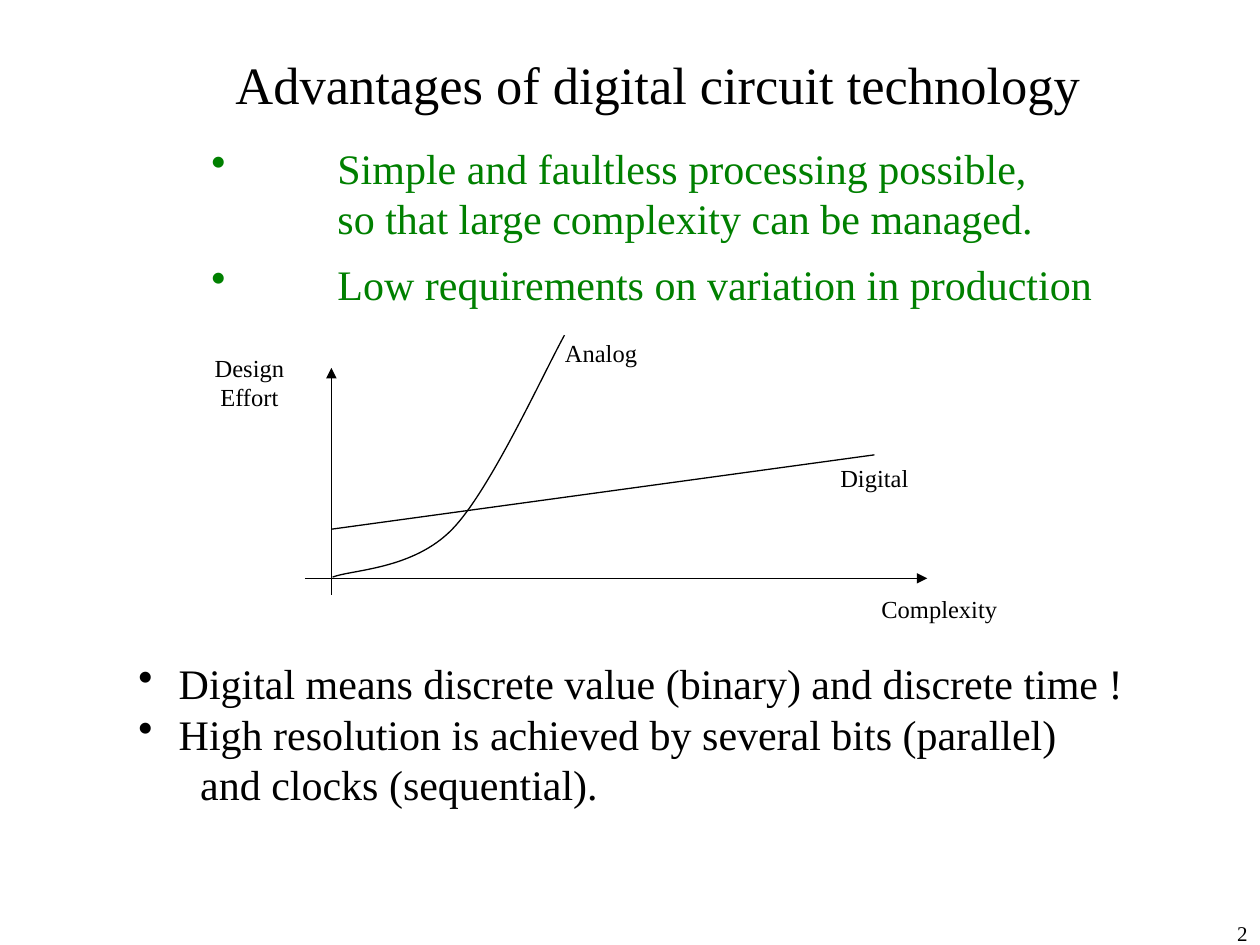
from lxml import etree
from pptx import Presentation
from pptx.dml.color import RGBColor
from pptx.enum.shapes import MSO_CONNECTOR
from pptx.enum.text import MSO_ANCHOR as ANCHOR, PP_ALIGN as ALIGN
from pptx.oxml.ns import qn
from pptx.util import Inches, Pt

COLORS = {"ink": "000000", "accent": "008000"}


class SlideBuilder:
    font = "Times New Roman"
    line_width = Pt(0.75)

    def __init__(self, slide):
        self.slide = slide

    def color(self, name):
        return RGBColor.from_string(COLORS[name])

    def text(self, box, lines, size, color="ink", bullet=None, gap=0, **format_values):
        """Add one paragraph; a bullet hangs to the left of the text by gap inches."""
        sp = self.slide.shapes.add_textbox(*map(Inches, box))
        tf = sp.text_frame
        tf.word_wrap = True
        for name, value in format_values.items():
            setattr(tf, name, value)
        self.paragraph(tf.paragraphs[0], lines, size, color, bullet, gap)
        return tf

    def paragraph(self, p, lines, size, color="ink", bullet=None, gap=0):
        p.text = "\v".join(lines)
        values = {"name": self.font, "size": Pt(size)}
        for r in p.runs:
            for name, value in values.items():
                setattr(r.font, name, value)
            r.font.color.rgb = self.color(color)
        pPr = p._p.get_or_add_pPr()
        if gap:
            pPr.set("marL", str(Inches(gap)))
        if bullet:
            pPr.set("indent", str(-Inches(gap)))
            etree.SubElement(pPr, qn("a:buChar"), char=bullet)

    def label(self, box, *lines):
        tf = self.text(box, lines, 14, word_wrap=False, vertical_anchor=ANCHOR.MIDDLE)
        tf.paragraphs[0].alignment = ALIGN.CENTER

    def stroke(self, sp):
        sp.line.color.rgb = self.color("ink")
        sp.line.width = self.line_width

    def line(self, start, end, arrow=False):
        sp = self.slide.shapes.add_connector(
            MSO_CONNECTOR.STRAIGHT, *map(Inches, start + end))
        self.stroke(sp)
        if arrow:
            etree.SubElement(sp.line._get_or_add_ln(), qn("a:tailEnd"), type="triangle")
        etree.SubElement(sp._element.spPr, qn("a:effectLst"))

    def curve(self, points):
        """Draw Bezier segments: a start, then two handles and an end for each."""
        start, *rest = [(Inches(x), Inches(y)) for x, y in points]
        builder = self.slide.shapes.build_freeform(*start)
        builder.add_line_segments(rest, close=False)
        sp = builder.convert_to_shape()
        outline = next(sp._element.iter(qn("a:path")))
        segments = outline.findall(qn("a:lnTo"))
        for i in range(0, len(segments), 3):
            bezier = etree.SubElement(outline, qn("a:cubicBezTo"))
            for segment in segments[i:i + 3]:
                bezier.append(segment[0])
                outline.remove(segment)
        sp.fill.background()
        sp.shadow.inherit = False
        self.stroke(sp)


def main():
    prs = Presentation()
    prs.slide_width, prs.slide_height = Inches(10), Inches(7.5)
    s = SlideBuilder(prs.slides.add_slide(prs.slide_layouts[6]))

    title = s.text((1.46, 0.36, 7.53, 0.61),
                   ["Advantages of digital circuit technology"], 30)
    title.paragraphs[0].alignment = ALIGN.CENTER

    advantages = [
        (1.08, 0.91, ["Simple and faultless processing possible,",
                      "so that large complexity can be managed."]),
        (2, 0.5, ["Low requirements on variation in production"]),
    ]
    for top, height, lines in advantages:
        s.text((1.58, top, 7.67, height), lines, 24, "accent", "•", 1)

    # Effort diagram
    origin_x, origin_y = 2.63, 4.59
    s.line((origin_x, 4.72), (origin_x, 2.92), arrow=True)
    s.line((2.42, origin_y), (7.36, origin_y), arrow=True)
    s.curve([(2.64, 4.58), (2.8, 4.52), (3.28, 4.52), (3.59, 4.2),
             (3.89, 3.89), (4.3, 2.99), (4.48, 2.66)])
    s.line((origin_x, 4.2), (6.94, 3.61))
    s.label((1.6, 2.75, 0.76, 0.57), "Design", "Effort")
    s.label((6.89, 4.66, 1.13, 0.34), "Complexity")
    s.label((4.38, 2.63, 0.78, 0.34), "Analog")
    s.label((6.57, 3.63, 0.74, 0.33), "Digital")

    notes = s.text((1, 5.17, 8.02, 1.31),
                   ["Digital means discrete value (binary) and discrete time !"],
                   24, bullet="•", gap=0.32)
    s.paragraph(notes.add_paragraph(),
                ["High resolution is achieved by several bits (parallel)"],
                24, bullet="•", gap=0.32)
    s.paragraph(notes.add_paragraph(), ["and clocks (sequential)."], 24, gap=0.49)

    number = s.text((9.15, 7.26, 0.85, 0.24), ["2"], 12)
    number.paragraphs[0].alignment = ALIGN.RIGHT

    prs.save("out.pptx")


if __name__ == "__main__":
    main()
